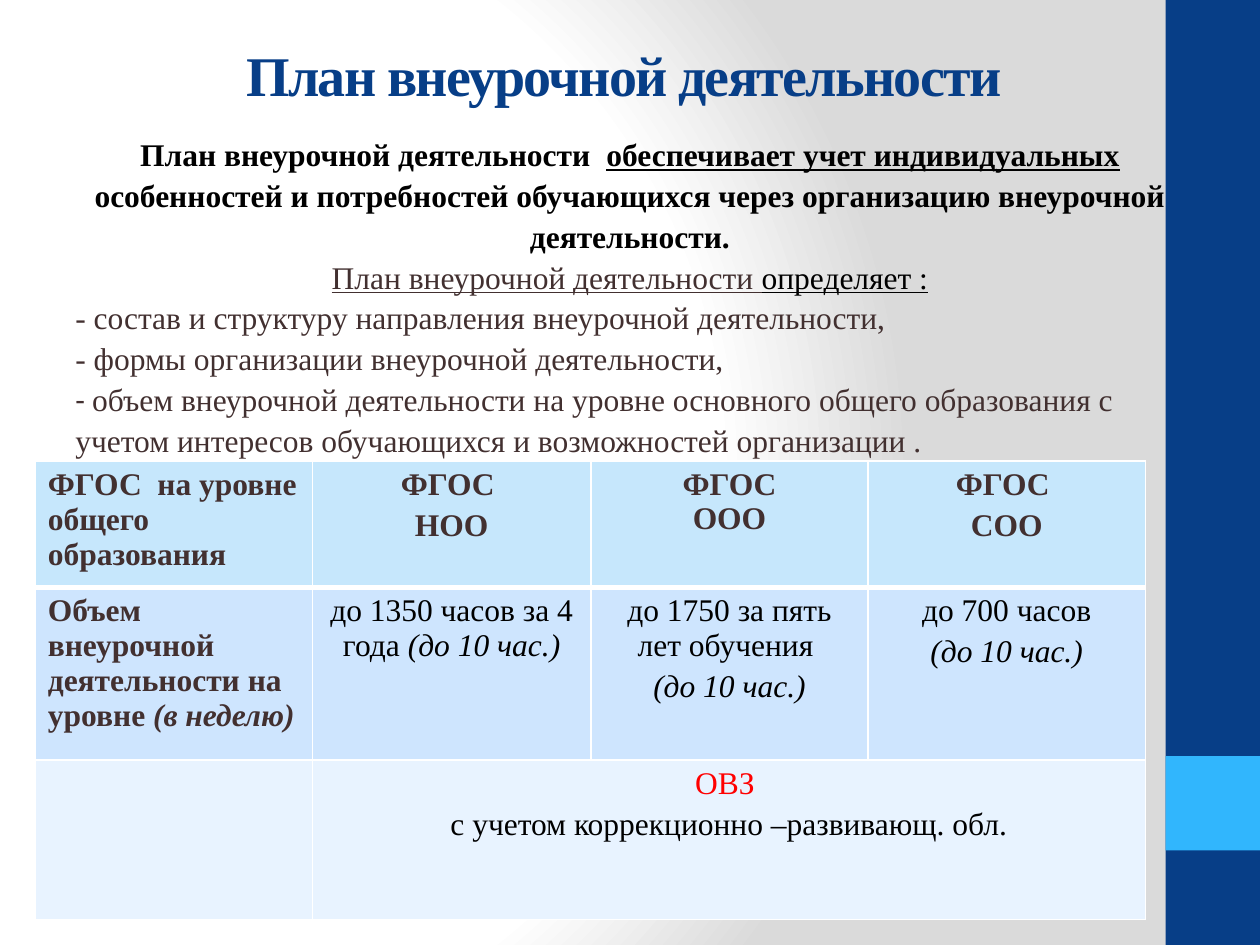
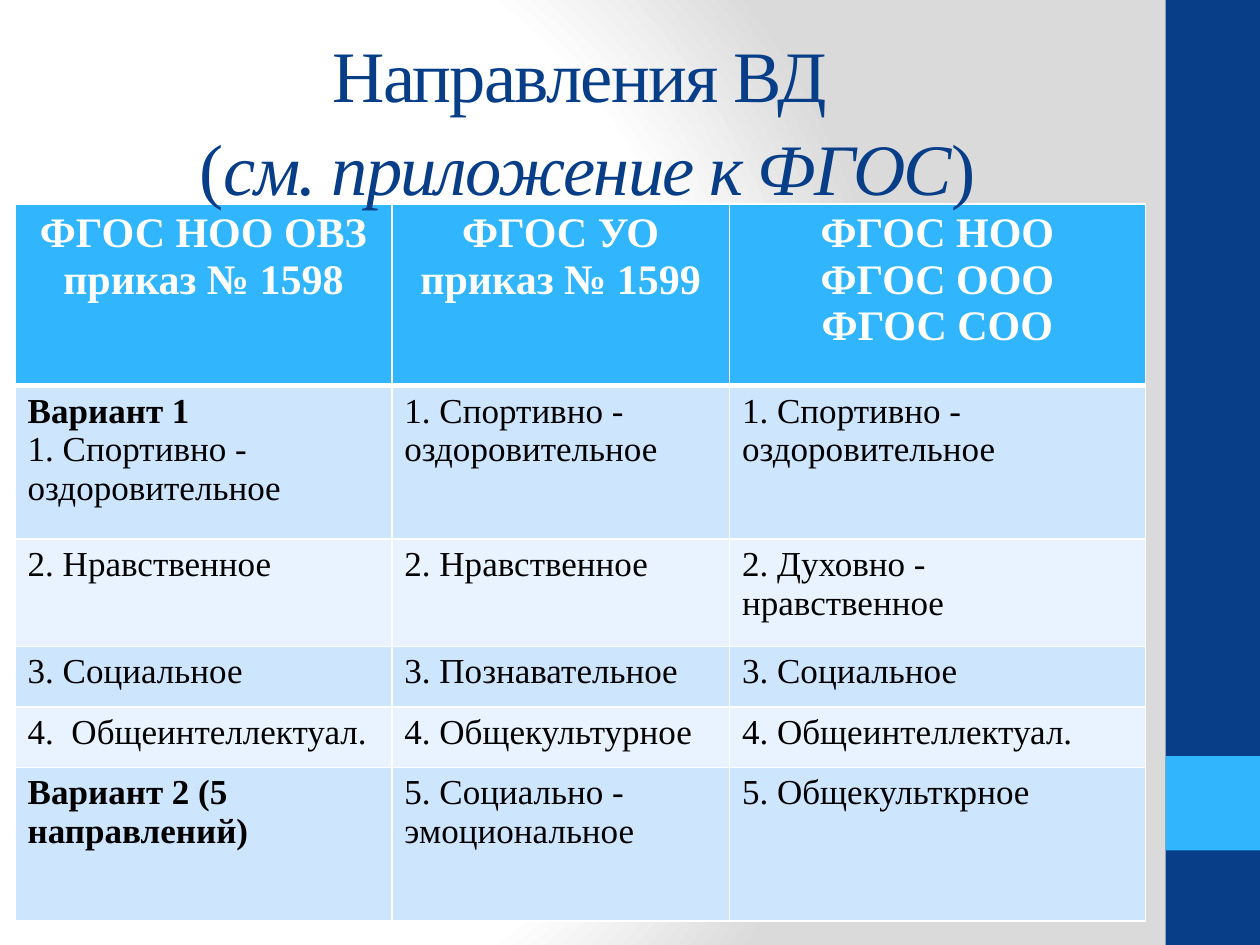
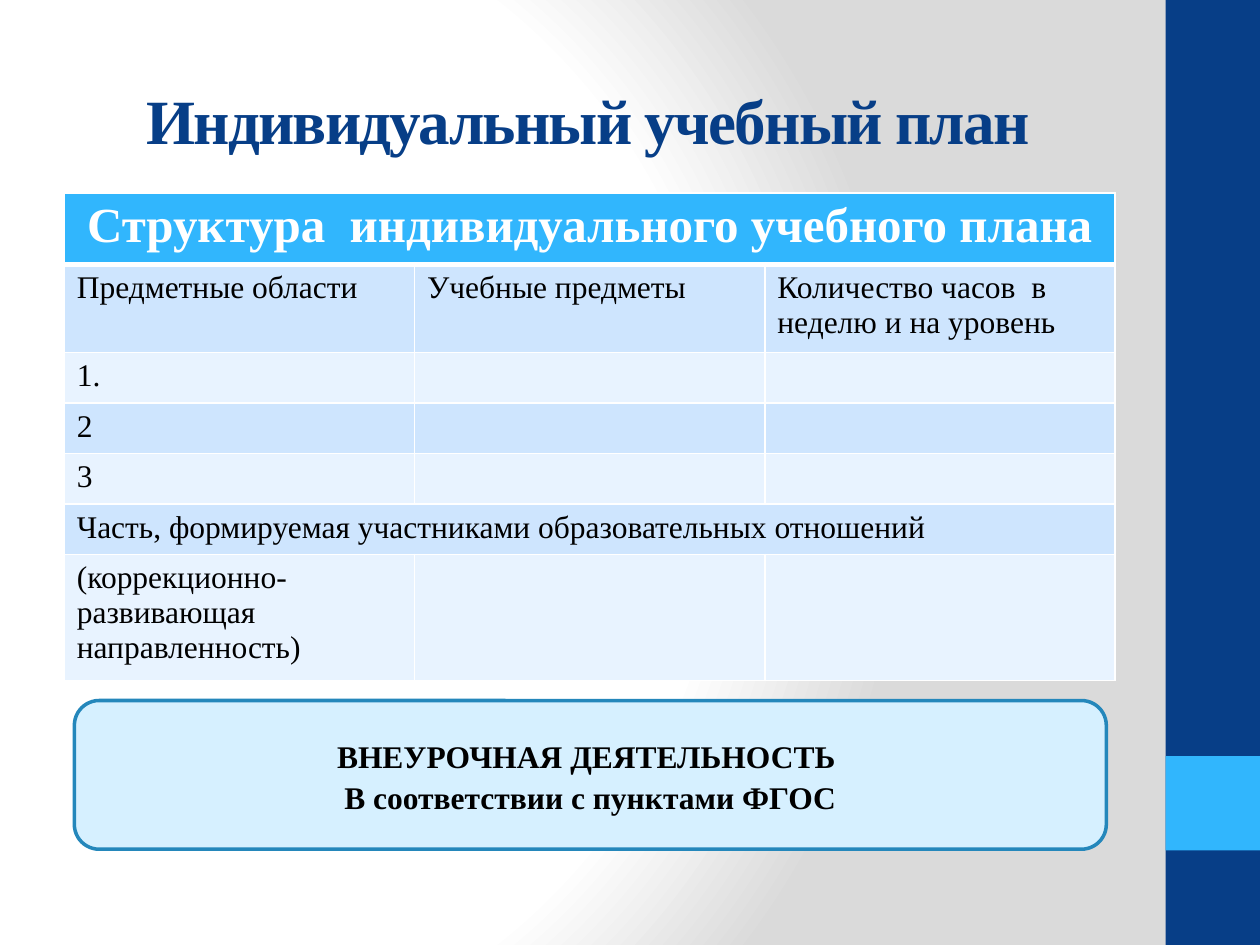
from lxml.etree import SubElement
from pptx import Presentation
from pptx.dml.color import RGBColor
from pptx.enum.shapes import MSO_SHAPE
from pptx.enum.text import MSO_ANCHOR, PP_ALIGN
from pptx.oxml import parse_xml
from pptx.oxml.ns import nsdecls, qn
from pptx.util import Inches, Pt

NAVY = RGBColor(0x07, 0x3E, 0x87)
SKY = RGBColor(0x31, 0xB6, 0xFD)
PALE_SKY = RGBColor(0xC6, 0xE7, 0xFC)
BAND_DARK = RGBColor(0xCE, 0xE5, 0xFE)
BAND_LIGHT = RGBColor(0xE8, 0xF3, 0xFF)
PANEL = RGBColor(0xD6, 0xF0, 0xFF)
PANEL_EDGE = RGBColor(0x24, 0x87, 0xBB)
BROWN = RGBColor(0x42, 0x30, 0x30)
RED = RGBColor(0xFF, 0x00, 0x00)
BLACK = RGBColor(0x00, 0x00, 0x00)
WHITE = RGBColor(0xFF, 0xFF, 0xFF)
SILVER = RGBColor(0xDA, 0xDA, 0xDA)

FONT = "Times New Roman"
SHAPE_LINE_SPACING = 1.08
GRADIENT_STOPS = [(0, WHITE), (75, WHITE), (100, SILVER)]


def write(paragraph, text, size=18, color=BLACK, bold=False, italic=False,
          underline=False, font=FONT, tracking=None):
    for index, line in enumerate(text.split("\n")):
        if index:
            paragraph.add_line_break()
        run = paragraph.add_run()
        run.text = line
        run.font.name = font
        run.font.size = Pt(size)
        run.font.bold = bold
        run.font.italic = italic
        run.font.underline = underline
        run.font.color.rgb = color
        if tracking is not None:
            run.font._element.set("spc", str(tracking * 100))


def write_paragraphs(frame, paragraphs, align=PP_ALIGN.LEFT, line_spacing=None,
                     space_before=None, **style):
    for parts in paragraphs:
        paragraph = frame.add_paragraph() if frame.text else frame.paragraphs[0]
        paragraph.alignment = align
        if line_spacing is not None:
            paragraph.line_spacing = line_spacing
        if space_before is not None:
            paragraph.space_before = Pt(space_before)
        for part in [(parts, {})] if isinstance(parts, str) else parts:
            text, changes = part
            write(paragraph, text, **{**style, **changes})


def set_borders(cell, widths):
    properties = cell._tc.get_or_add_tcPr()
    for position, (side, width) in enumerate(widths.items()):
        line = parse_xml(
            f'<a:{side} {nsdecls("a")} w="{Pt(width)}"><a:solidFill>'
            f'<a:srgbClr val="{WHITE}"/></a:solidFill></a:{side}>')
        properties.insert(position, line)


class Deck:
    def __init__(self):
        self.presentation = Presentation()
        self.presentation.slide_width = Inches(10)
        self.presentation.slide_height = Inches(7.5)
        self.slide = None

    def new_slide(self):
        self.slide = self.presentation.slides.add_slide(
            self.presentation.slide_layouts[6])
        self.background()
        self.shape(9.25, 0, 0.75, 7.5, NAVY)
        self.shape(9.25, 6, 0.75, 0.75, SKY)

    def background(self):
        self.slide.background.fill.gradient()
        gradient = self.slide.element.find(".//" + qn("a:gradFill"))
        for child in list(gradient):
            gradient.remove(child)
        stops = SubElement(gradient, qn("a:gsLst"))
        for percent, color in GRADIENT_STOPS:
            stop = SubElement(stops, qn("a:gs"), pos=str(percent * 1000))
            SubElement(stop, qn("a:srgbClr"), val=str(color))
        focus = SubElement(gradient, qn("a:path"), {"path": "circle"})
        SubElement(focus, qn("a:fillToRect"),
                   l="20000", t="50000", r="100000", b="50000")

    def shape(self, left, top, width, height, fill, edge=None,
              kind=MSO_SHAPE.RECTANGLE):
        shape = self.slide.shapes.add_shape(
            kind, Inches(left), Inches(top), Inches(width), Inches(height))
        shape.shadow.inherit = False
        shape.fill.solid()
        shape.fill.fore_color.rgb = fill
        if edge is None:
            shape.line.fill.background()
        else:
            shape.line.color.rgb = edge
            shape.line.width = Pt(2)
        return shape

    def text_frame(self, left, top, width, height, anchor=MSO_ANCHOR.TOP):
        frame = self.slide.shapes.add_textbox(
            Inches(left), Inches(top), Inches(width), Inches(height)).text_frame
        frame.word_wrap = True
        frame.vertical_anchor = anchor
        return frame

    def title(self, parts, size, bold=True, left=0.5, top=0.3, width=8.33,
              height=1.25):
        frame = self.text_frame(left, top, width, height, MSO_ANCHOR.MIDDLE)
        write_paragraphs(frame, [parts], align=PP_ALIGN.CENTER, size=size,
                         bold=bold, color=NAVY, tracking=-1,
                         line_spacing=SHAPE_LINE_SPACING)

    def table(self, left, top, widths, heights, rows, style, header_fill=SKY):
        table = self.slide.shapes.add_table(
            len(heights), len(widths), Inches(left), Inches(top),
            Inches(sum(widths)), Inches(sum(heights))).table
        for column, width in zip(table.columns, widths):
            column.width = Inches(width)
        for row, height in zip(table.rows, heights):
            row.height = Inches(height)
        fills = [header_fill] + [BAND_DARK, BAND_LIGHT] * len(rows)
        for r, contents in enumerate(rows):
            for c in range(len(widths)):
                cell = table.cell(r, c)
                cell.fill.solid()
                cell.fill.fore_color.rgb = fills[r]
                set_borders(cell, {"lnL": 1, "lnR": 1, "lnT": 3 if r == 1 else 1,
                                   "lnB": 3 if r == 0 else 1})
            if len(contents) < len(widths):
                table.cell(r, len(contents) - 1).merge(
                    table.cell(r, len(widths) - 1))
            for c, content in enumerate(contents):
                if content:
                    paragraphs = [content] if isinstance(content, str) else content
                    write_paragraphs(table.cell(r, c).text_frame, paragraphs,
                                     **style(r, c))
        return table


def hours_style(row, column):
    heading = row == 0 or column == 0
    return {"bold": heading, "color": BROWN if heading else BLACK,
            "align": PP_ALIGN.CENTER if column else PP_ALIGN.LEFT,
            "space_before": 3.6}


def header_style(header_size, body_size):
    def style(row, column):
        if row == 0:
            return {"size": header_size, "bold": True, "color": WHITE,
                    "align": PP_ALIGN.CENTER}
        return {"size": body_size}
    return style


def activity_plan(deck):
    deck.new_slide()
    summary = deck.text_frame(0.5, 0.84, 9, 5.73)
    summary.margin_top = Inches(0.21)
    underlined = {"underline": True}
    write_paragraphs(summary, [
        [("План внеурочной деятельности  ", {}),
         ("обеспечивает учет индивидуальных ", underlined),
         ("особенностей и потребностей обучающихся через организацию "
          "внеурочной деятельности.", {})],
        [("План внеурочной деятельности ",
          {"underline": True, "bold": False, "color": BROWN}),
         ("определяет :", {"underline": True, "bold": False})],
    ], align=PP_ALIGN.CENTER, bold=True, line_spacing=SHAPE_LINE_SPACING)
    write_paragraphs(summary, [
        "- состав и структуру направления внеурочной деятельности,",
        "- формы организации внеурочной деятельности,",
        [("- ", {"font": "Calibri"}),
         ("объем внеурочной деятельности на уровне основного общего "
          "образования с учетом интересов обучающихся и возможностей "
          "организации .", {})],
    ], color=BROWN, line_spacing=SHAPE_LINE_SPACING)
    deck.title("План внеурочной деятельности ", 32, top=0.13, width=9, height=0.87)

    weekly_limit = [("(до 10 час.)", {"italic": True})]
    hours = deck.table(0.28, 3.66, [2.2, 2.21, 2.2, 2.2], [0.94, 1.37, 1.27], [
        ["ФГОС  на уровне общего образования", ["ФГОС ", "НОО"],
         ["ФГОС", "ООО"], ["ФГОС ", "СОО"]],
        [[[("Объем внеурочной деятельности на уровне ", {}),
           ("(в неделю)", {"italic": True})]],
         [[("до 1350 часов за 4 года ", {})] + weekly_limit],
         ["до 1750 за пять лет обучения ", weekly_limit],
         ["до 700 часов", weekly_limit]],
        ["", [[("ОВЗ ", {"color": RED})],
              "с учетом коррекционно –развивающ. обл."]],
    ], hours_style, header_fill=PALE_SKY)
    hours.cell(0, 2).text_frame.paragraphs[1].line_spacing = 0.75


def directions(deck):
    deck.new_slide()
    sport = "1. Спортивно - оздоровительное"
    deck.table(0.12, 1.62, [2.99, 2.68, 3.3], [1.44, 1.22, 0.85, 0.48, 0.48, 1.22], [
        ["ФГОС НОО ОВЗ приказ № 1598", ["ФГОС УО", "приказ № 1599"],
         ["ФГОС НОО", "ФГОС ООО", "ФГОС СОО"]],
        [[[("Вариант 1", {"bold": True})], sport], sport, sport],
        ["2. Нравственное", "2. Нравственное", "2. Духовно - нравственное"],
        ["3. Социальное", "3. Познавательное", "3. Социальное"],
        ["4.  Общеинтеллектуал.", "4. Общекультурное", "4. Общеинтеллектуал."],
        [[[("Вариант 2 (5 направлений)", {"bold": True})]],
         "5. Социально - эмоциональное", "5. Общекульткрное"],
    ], header_style(24, 20))
    deck.title([("Направления ВД \n(", {}),
                ("см. приложение к ФГОС", {"italic": True}), (")", {})],
               41.4, bold=False)


def individual_plan(deck):
    deck.new_slide()
    deck.title("Индивидуальный учебный план", 36)
    deck.table(0.51, 1.53, [2.78] * 3, [0.56] + [0.4] * 5 + [0.69], [
        ["Структура  индивидуального учебного плана"],
        ["Предметные области", "Учебные предметы",
         "Количество часов  в неделю и на уровень"],
        ["1.", "", ""],
        ["2", "", ""],
        ["3", "", ""],
        ["Часть, формируемая участниками образовательных отношений"],
        ["(коррекционно-развивающая направленность)", "", ""],
    ], header_style(28, 18))
    panel = deck.shape(0.59, 5.56, 8.19, 1.18, PANEL, PANEL_EDGE,
                       MSO_SHAPE.ROUNDED_RECTANGLE)
    panel.text_frame.vertical_anchor = MSO_ANCHOR.MIDDLE
    write_paragraphs(panel.text_frame, [
        "ВНЕУРОЧНАЯ ДЕЯТЕЛЬНОСТЬ ", "В соответствии с пунктами ФГОС",
    ], align=PP_ALIGN.CENTER, bold=True, line_spacing=SHAPE_LINE_SPACING)


def main():
    deck = Deck()
    activity_plan(deck)
    directions(deck)
    individual_plan(deck)
    deck.presentation.save("out.pptx")


if __name__ == "__main__":
    main()
